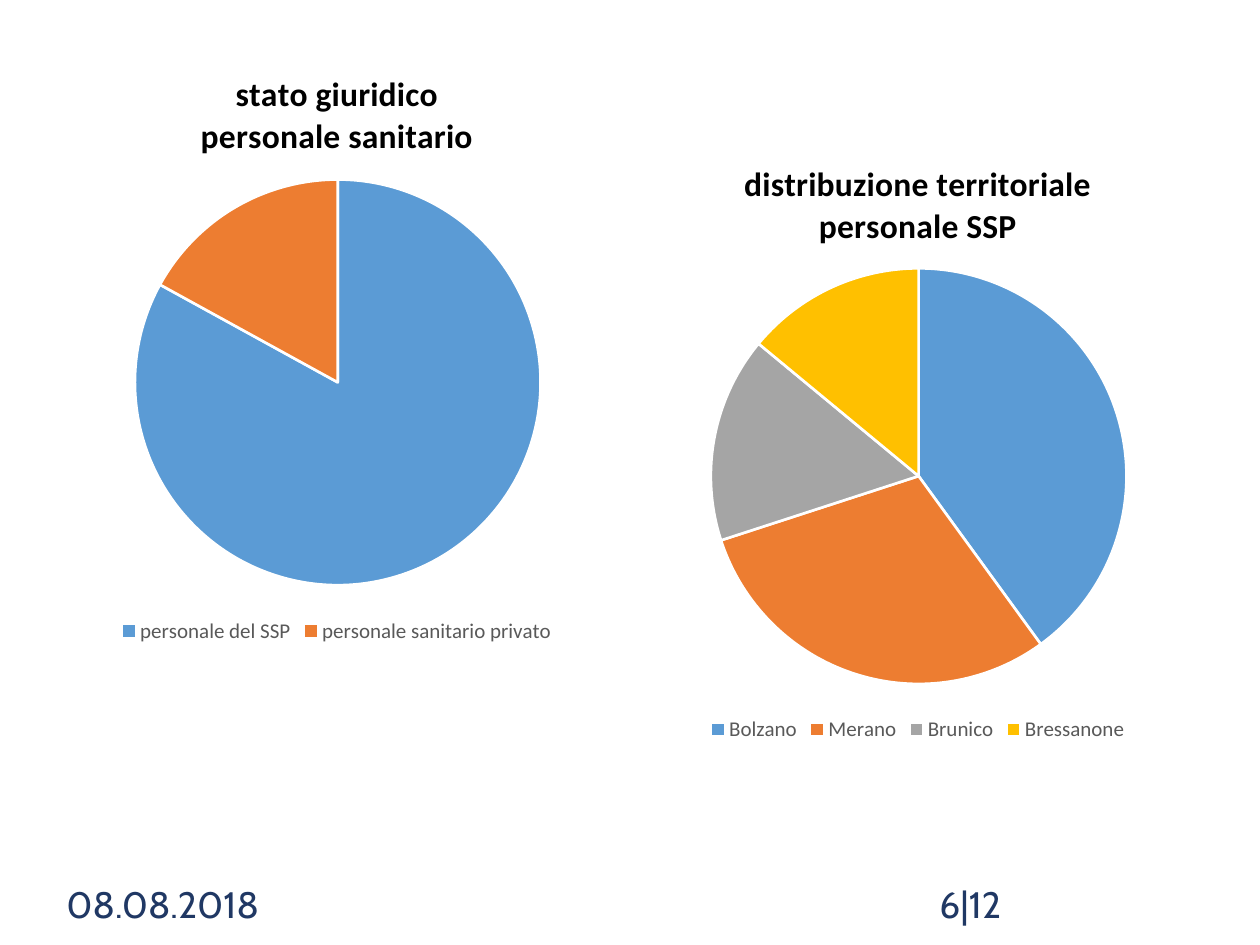
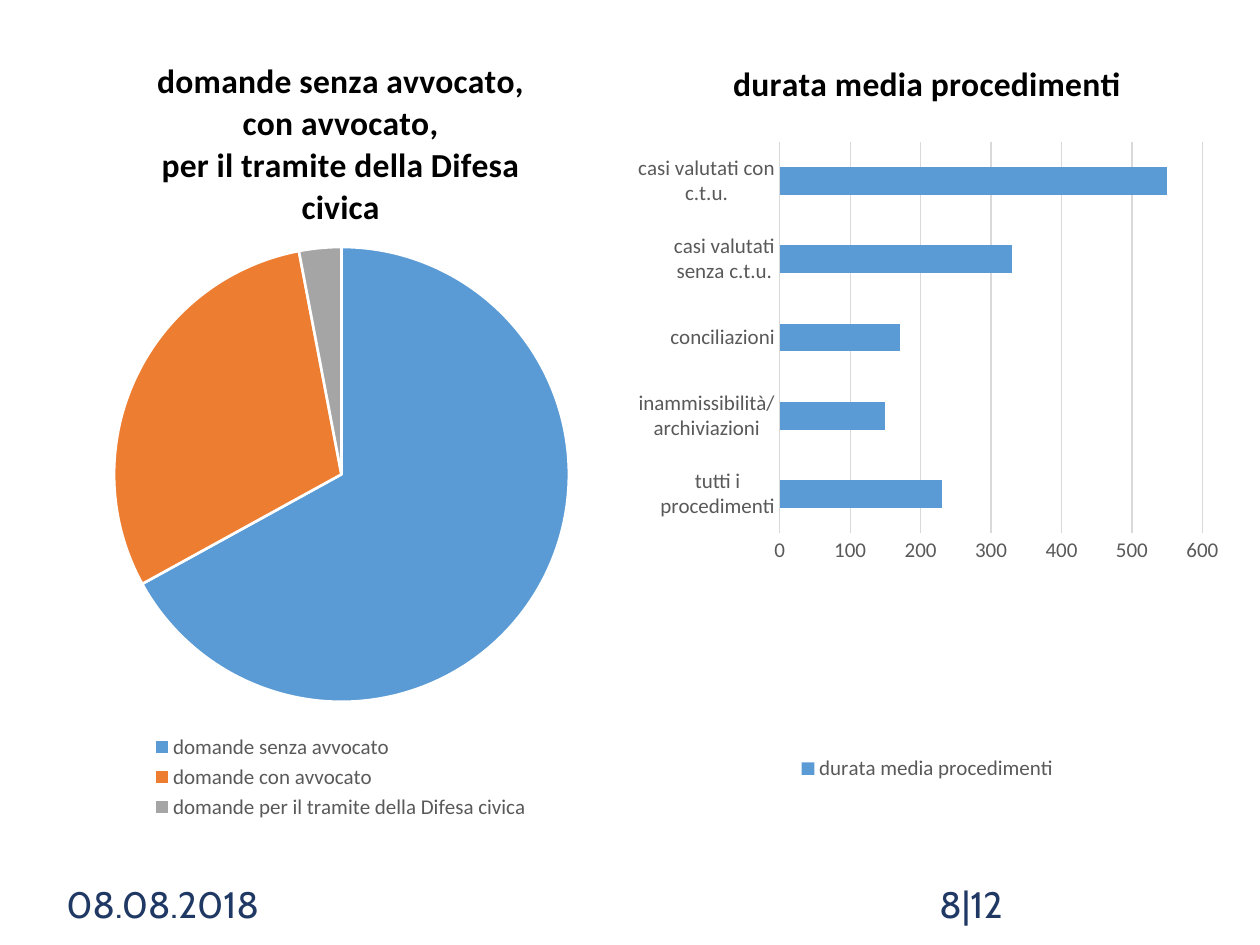
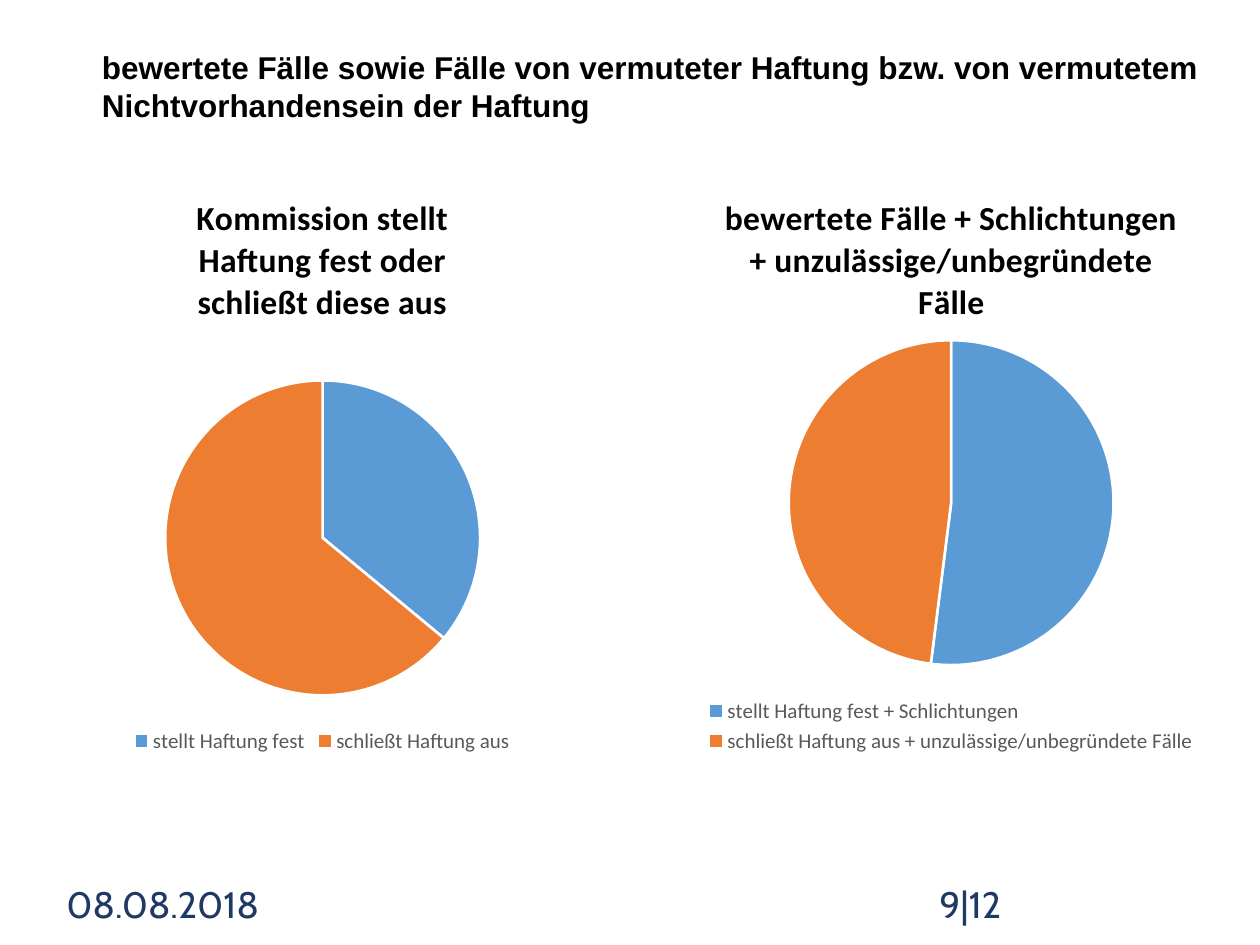
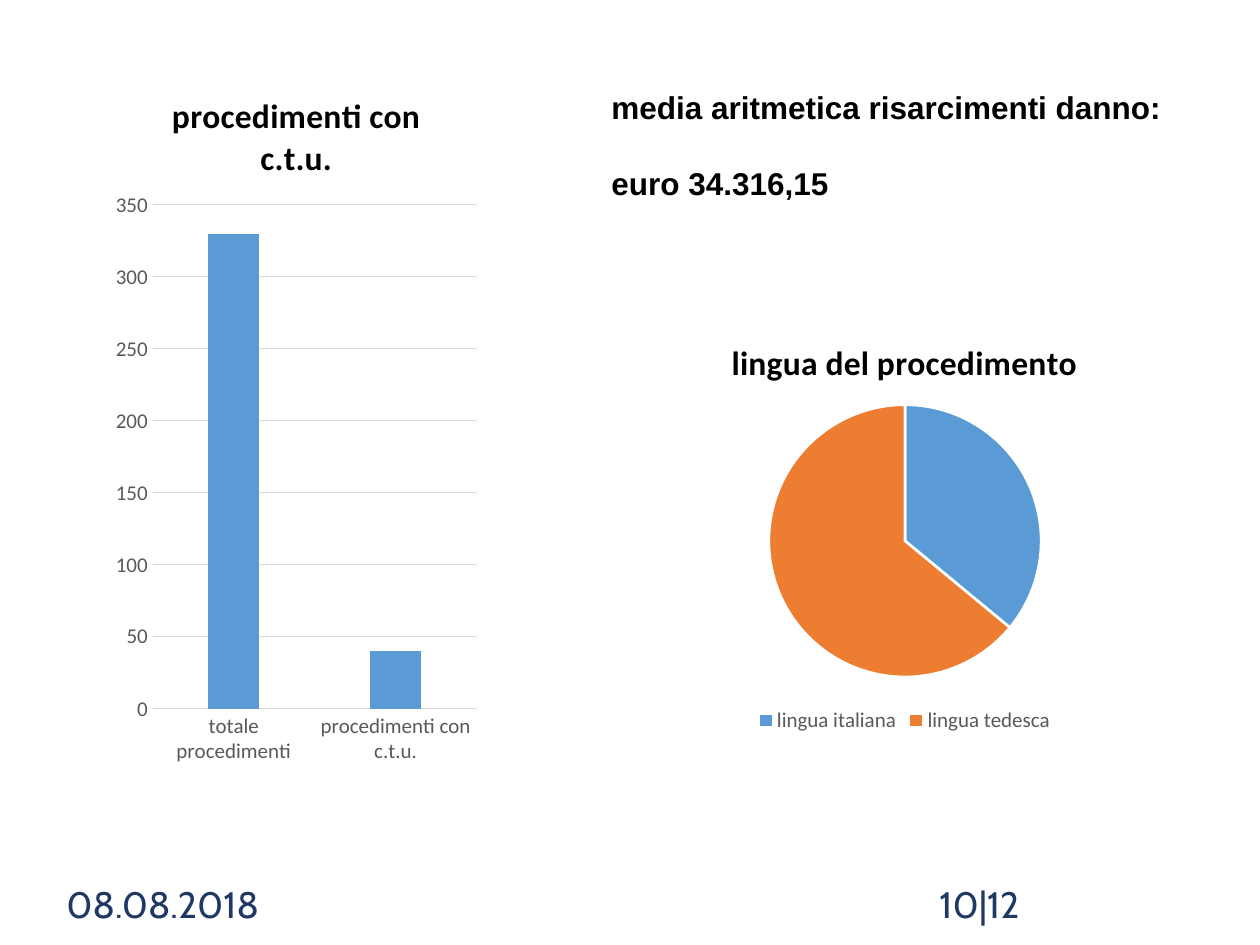
from dataclasses import dataclass

from lxml import etree
from pptx import Presentation
from pptx.chart.data import CategoryChartData
from pptx.dml.color import RGBColor as RGB
from pptx.enum.chart import XL_CHART_TYPE as CHART, XL_LEGEND_POSITION as LEGEND
from pptx.enum.chart import XL_TICK_MARK as TICK
from pptx.enum.text import MSO_ANCHOR as ANCHOR, MSO_AUTO_SIZE as AUTO, PP_ALIGN as ALIGN
from pptx.oxml.ns import qn
from pptx.util import Cm, Pt


@dataclass(frozen=True)
class Theme:
    black: RGB = RGB.from_string("000000")
    white: RGB = RGB.from_string("FFFFFF")
    navy: RGB = RGB.from_string("203864")
    label: RGB = RGB.from_string("595959")
    grid: RGB = RGB.from_string("D9D9D9")
    series: tuple = tuple(map(RGB.from_string, ("5B9BD5", "ED7D31", "A5A5A5", "FFC000")))
    heading_font: str = "Arial"
    chart_font: str = "Calibri"
    footer_font: str = "Cabin"
    heading_size: float = 18
    chart_title_size: float = 19.2
    chart_size: float = 10
    label_size: float = 12
    footer_size: float = 21


THEME = Theme()
DATE = "08.08.2018"
SLIDE_TOTAL = 12
TITLE_ONLY, BLANK = 5, 6


def format_font(font, name, size, color, bold=None):
    font.name, font.size, font.bold = name, Pt(size), bold
    font.color.rgb = color


def write(tf, text, font, size, color, bold=None, align=None, gap=None):
    """Write one paragraph per line of text, with gap points between them."""
    for i, line in enumerate(text.split("\n")):
        p = tf.add_paragraph() if i else tf.paragraphs[0]
        p.alignment = align
        if i and gap:
            p.space_before = Pt(gap)
        r = p.add_run()
        r.text = line
        format_font(r.font, font, size, color, bold)


def add_footer(s, number):
    for left, text in ((1.09, DATE), (18.69, f"{number}|{SLIDE_TOTAL}")):
        tf = s.shapes.add_textbox(Cm(left), Cm(17.65), Cm(5.72), Cm(1.02)).text_frame
        tf.word_wrap = True
        write(tf, text, THEME.footer_font, THEME.footer_size, THEME.navy)


def add_slide(prs, number, layout=BLANK):
    s = prs.slides.add_slide(prs.slide_layouts[layout])
    add_footer(s, number)
    return s


def set_heading(s, text, box, gap=None):
    sp = s.shapes.title
    sp.left, sp.top, sp.width, sp.height = map(Cm, box)
    tf = sp.text_frame
    tf.auto_size, tf.vertical_anchor, tf.word_wrap = AUTO.NONE, ANCHOR.TOP, True
    write(tf, text, THEME.heading_font, THEME.heading_size, THEME.black,
          bold=True, align=ALIGN.LEFT, gap=gap)


def place_plot(chart, box, plot):
    """Fix the inner plot area; box and plot are slide positions in cm."""
    left, top, width, height = box
    area = chart.element.xpath("c:chart/c:plotArea")[0]
    for old in area.findall(qn("c:layout")):
        area.remove(old)
    layout = etree.Element(qn("c:layout"))
    area.insert(0, layout)
    manual = etree.SubElement(layout, qn("c:manualLayout"))
    settings = {
        "layoutTarget": "inner", "xMode": "edge", "yMode": "edge",
        "x": (plot[0] - left) / width, "y": (plot[1] - top) / height,
        "w": plot[2] / width, "h": plot[3] / height,
    }
    for tag, value in settings.items():
        etree.SubElement(manual, qn(f"c:{tag}")).set("val", str(value))


def format_labels(font):
    format_font(font, THEME.chart_font, THEME.label_size, THEME.label)


def add_chart(s, kind, title, values, box, plot, name="Series 1", legend=True):
    data = CategoryChartData()
    data.categories = list(values)
    data.add_series(name, list(values.values()))
    chart = s.shapes.add_chart(kind, *map(Cm, box), data).chart
    format_font(chart.font, THEME.chart_font, THEME.chart_size, THEME.black)
    chart.has_title = True
    write(chart.chart_title.text_frame, title, THEME.chart_font,
          THEME.chart_title_size, THEME.black, bold=True)
    chart.has_legend = legend
    if legend:
        chart.legend.position = LEGEND.BOTTOM
        chart.legend.include_in_layout = False
        format_labels(chart.legend.font)
    place_plot(chart, box, plot)
    return chart


def add_pie(s, title, values, box, circle):
    """Add a pie chart; circle is the left, top and diameter of the pie in cm."""
    left, top, diameter = circle
    chart = add_chart(s, CHART.PIE, title, values, box, (left, top, diameter, diameter))
    pie = chart.plots[0]
    pie.vary_by_categories = True
    for i, color in zip(range(len(values)), THEME.series):
        fmt = pie.series[0].points[i].format
        fmt.fill.solid()
        fmt.fill.fore_color.rgb = color
        fmt.line.color.rgb = THEME.white
        fmt.line.width = Pt(1.5)


def draw_line(line):
    line.color.rgb = THEME.grid
    line.width = Pt(0.75)


def add_bars(s, kind, title, values, box, plot, top_value, step, gap, overlap=0, **options):
    chart = add_chart(s, kind, title, values, box, plot, **options)
    bars = chart.plots[0]
    bars.vary_by_categories = False
    bars.gap_width, bars.overlap = gap, overlap
    fill = bars.series[0].format.fill
    fill.solid()
    fill.fore_color.rgb = THEME.series[0]
    cat, val = chart.category_axis, chart.value_axis
    for axis in (cat, val):
        axis.major_tick_mark = axis.minor_tick_mark = TICK.NONE
        format_labels(axis.tick_labels.font)
    draw_line(cat.format.line)
    val.format.line.fill.background()
    val.minimum_scale, val.maximum_scale, val.major_unit = 0, top_value, step
    val.has_major_gridlines = True
    draw_line(val.major_gridlines.format.line)


def add_staff_slide(prs):
    s = add_slide(prs, 6)
    add_pie(s, "stato giuridico\npersonale sanitario",
            {"personale del SSP": 83, "personale sanitario privato": 17},
            (1.27, 0.99, 11.05, 12.09), (2.72, 3.62, 8.18))
    add_pie(s, "distribuzione territoriale\npersonale SSP",
            {"Bolzano": 40, "Merano": 30, "Brunico": 16, "Bressanone": 14},
            (12.32, 2.79, 12.37, 12.27), (14.33, 5.41, 8.38))


def add_duration_slide(prs):
    s = add_slide(prs, 8)
    add_pie(s, "domande senza avvocato,\ncon avvocato,\nper il tramite della Difesa civica",
            {"domande senza avvocato": 67, "domande con avvocato": 30,
             "domande per il tramite della Difesa civica": 3},
            (1.75, 0.64, 10.24, 15.98), (2.3, 4.98, 9.17))
    durations = {
        "tutti i procedimenti": 230,
        "inammissibilità/archiviazioni": 150,
        "conciliazioni": 170,
        "casi valutati senza c.t.u.": 330,
        "casi valutati con c.t.u.": 550,
    }
    title = "durata media procedimenti"
    add_bars(s, CHART.BAR_CLUSTERED, title, durations,
             (12.8, 0.64, 11.79, 15.21), (15.72, 2.86, 8.52, 7.89),
             top_value=600, step=100, gap=182, name=title)


def add_liability_slide(prs):
    s = add_slide(prs, 9, TITLE_ONLY)
    set_heading(s, "bewertete Fälle sowie Fälle von vermuteter Haftung bzw. "
                "von vermutetem Nichtvorhandensein der Haftung",
                (1.8, 0.84, 22.96, 2.57))
    add_pie(s, "Kommission stellt Haftung fest oder schließt diese aus",
            {"stellt Haftung fest": 36, "schließt Haftung aus": 64},
            (1.8, 3.4, 9.4, 11.89), (3.33, 7.67, 6.35))
    add_pie(s, "bewertete Fälle + Schlichtungen + unzulässige/unbegründete Fälle",
            {"stellt Haftung fest + Schlichtungen": 52,
             "schließt Haftung aus + unzulässige/unbegründete Fälle": 48},
            (13.26, 3.4, 11.84, 11.89), (15.9, 6.86, 6.55))


def add_compensation_slide(prs):
    s = add_slide(prs, 10, TITLE_ONLY)
    add_bars(s, CHART.COLUMN_CLUSTERED, "procedimenti con c.t.u.",
             {"totale procedimenti": 330, "procedimenti con c.t.u.": 40},
             (2.18, 1.3, 7.59, 14.4), (3.08, 4.13, 6.53, 10.16),
             top_value=350, step=50, gap=219, overlap=-27, legend=False)
    set_heading(s, "media aritmetica risarcimenti danno:\neuro 34.316,15",
                (12.07, 1.65, 12.67, 2.57), gap=22)
    add_pie(s, "lingua del procedimento",
            {"lingua italiana": 36, "lingua tedesca": 64},
            (12.07, 6.4, 12.34, 8.48), (15.5, 8.16, 5.49))


def main():
    prs = Presentation()
    prs.slide_width, prs.slide_height = Cm(25.4), Cm(19.05)
    add_staff_slide(prs)
    add_duration_slide(prs)
    add_liability_slide(prs)
    add_compensation_slide(prs)
    prs.save("out.pptx")


if __name__ == "__main__":
    main()
